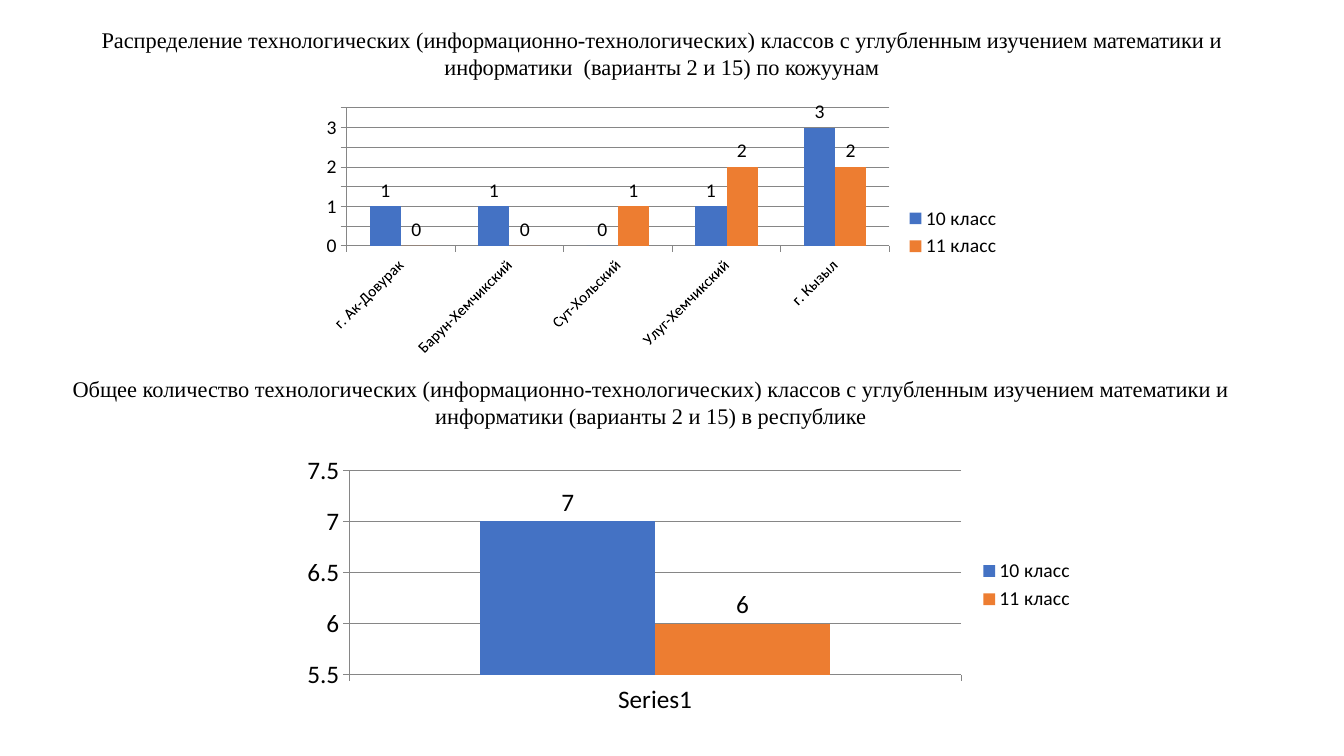
import pptx
import pptx.chart.data
import pptx.dml.color
import pptx.enum.chart
import pptx.enum.text
import pptx.util
from pptx.util import Inches

COLORS = {"text": "000000", "grid": "868686", "10 класс": "4472C4", "11 класс": "ED7D31"}
HEADING_FONT = "Times New Roman"
CHART_FONT = "Calibri"


def rgb(name):
    return pptx.dml.color.RGBColor.from_string(COLORS[name])


def set_font(font, size, name=CHART_FONT):
    font.size = pptx.util.Pt(size)
    font.name = name
    font.bold = False
    font.color.rgb = rgb("text")


def place(sp, left, top, width, height):
    sp.left, sp.top = Inches(left), Inches(top)
    sp.width, sp.height = Inches(width), Inches(height)


def write_heading(sp, text):
    tf = sp.text_frame
    tf.word_wrap = True
    tf.auto_size = pptx.enum.text.MSO_AUTO_SIZE.SHAPE_TO_FIT_TEXT
    tf.vertical_anchor = pptx.enum.text.MSO_ANCHOR.TOP
    p = tf.paragraphs[0]
    p.alignment = pptx.enum.text.PP_ALIGN.CENTER
    r = p.add_run()
    r.text = text
    set_font(r.font, 16, HEADING_FONT)


def style_axis(axis, size):
    axis.major_tick_mark = pptx.enum.chart.XL_TICK_MARK.OUTSIDE
    axis.minor_tick_mark = pptx.enum.chart.XL_TICK_MARK.NONE
    axis.format.line.color.rgb = rgb("grid")
    axis.format.line.width = pptx.util.Pt(0.75)
    set_font(axis.tick_labels.font, size)


def add_column_chart(s, box, categories, series, scale, sizes, rotation=None):
    """scale is (minimum, maximum, step); sizes is (category, value, label)."""
    data = pptx.chart.data.CategoryChartData()
    data.categories = categories
    for name, values in series.items():
        data.add_series(name, values)
    chart = s.shapes.add_chart(
        pptx.enum.chart.XL_CHART_TYPE.COLUMN_CLUSTERED,
        *[Inches(v) for v in box], data).chart
    set_font(chart.font, 18)
    chart.has_title = False

    # Legend
    chart.has_legend = True
    chart.legend.position = pptx.enum.chart.XL_LEGEND_POSITION.RIGHT
    chart.legend.include_in_layout = False
    set_font(chart.legend.font, 14)

    # Axes
    category_size, value_size, label_size = sizes
    style_axis(chart.category_axis, category_size)
    if rotation is not None:
        body = chart.category_axis._element.txPr.bodyPr
        body.set("rot", str(rotation * 60000))
        body.set("vert", "horz")
    axis = chart.value_axis
    style_axis(axis, value_size)
    axis.minimum_scale, axis.maximum_scale, axis.major_unit = scale
    axis.tick_labels.number_format = "General"
    axis.tick_labels.number_format_is_linked = False
    axis.has_major_gridlines = True
    axis.major_gridlines.format.line.color.rgb = rgb("grid")
    axis.major_gridlines.format.line.width = pptx.util.Pt(0.75)

    # Columns and their values
    plot = chart.plots[0]
    plot.gap_width = 150
    plot.overlap = 0
    plot.vary_by_categories = False
    for ser in plot.series:
        ser.format.fill.solid()
        ser.format.fill.fore_color.rgb = rgb(ser.name)
        ser.invert_if_negative = False
        labels = ser.data_labels
        labels.show_value = True
        labels.position = pptx.enum.chart.XL_LABEL_POSITION.OUTSIDE_END
        set_font(labels.font, label_size)


def main():
    prs = pptx.Presentation()
    prs.slide_width, prs.slide_height = Inches(13.33), Inches(7.5)
    s = prs.slides.add_slide(prs.slide_layouts[5])

    # Classes by district
    title = s.shapes.title
    place(title, 0.37, 0.21, 12.39, 0.64)
    write_heading(title, "Распределение технологических (информационно-технологических) "
                  "классов с углубленным изучением математики и информатики  "
                  "(варианты 2 и 15) по кожуунам")
    add_column_chart(
        s, (3.1, 0.99, 6.93, 2.6),
        ["г. Ак-Довурак", "Барун-Хемчикский", "Сут-Хольский", "Улуг-Хемчикский", "г. Кызыл"],
        {"10 класс": (1, 1, 0, 1, 3), "11 класс": (0, 0, 1, 2, 2)},
        scale=(0, 3.5, 0.5), sizes=(11, 14, 14), rotation=-45)

    # Total in the republic
    sp = s.shapes.add_textbox(Inches(0.26), Inches(3.67), Inches(12.39), Inches(0.64))
    write_heading(sp, "Общее количество технологических (информационно-технологических) "
                  "классов с углубленным изучением математики и информатики "
                  "(варианты 2 и 15) в республике")
    add_column_chart(
        s, (2.89, 4.46, 7.87, 2.69), ["Series1"],
        {"10 класс": (7,), "11 класс": (6,)},
        scale=(5.5, 7.5, 0.5), sizes=(18, 18, 18))

    prs.save("out.pptx")


if __name__ == "__main__":
    main()
